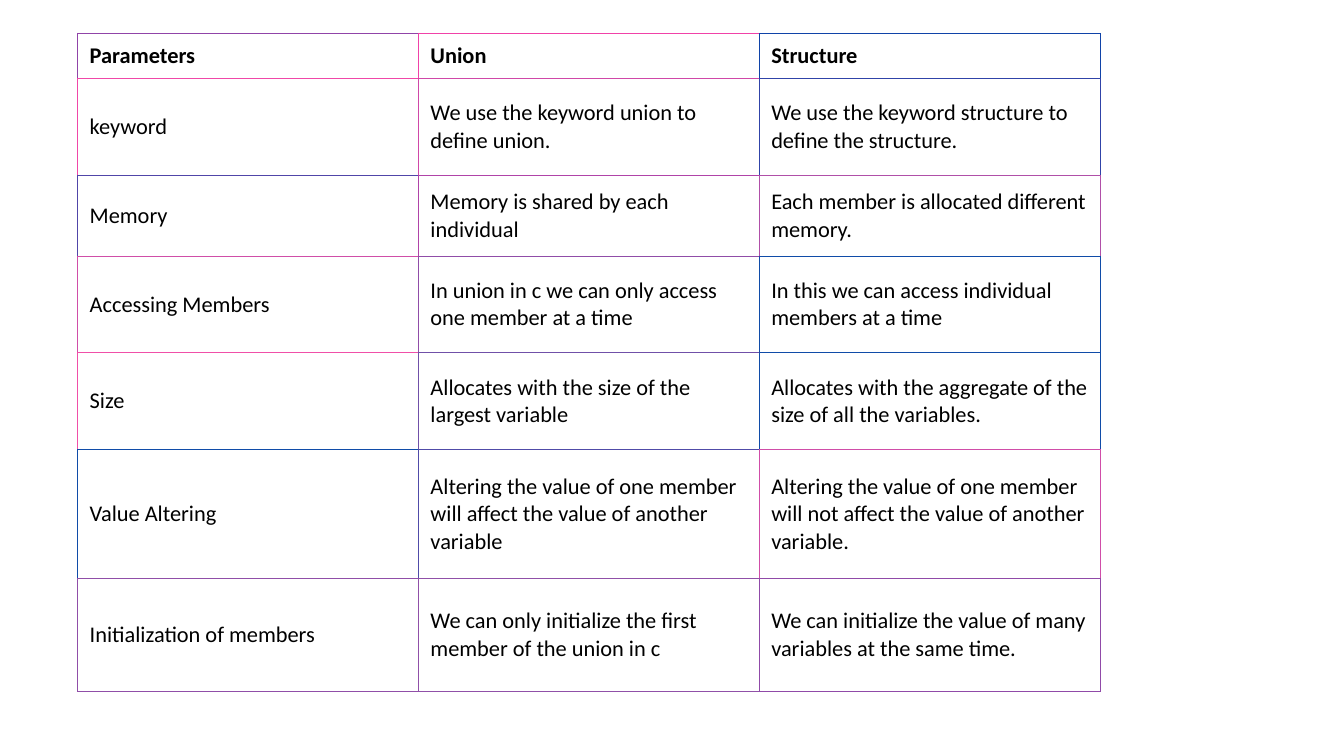
from dataclasses import dataclass

from lxml.etree import SubElement
from pptx import Presentation
from pptx.dml.color import RGBColor
from pptx.enum.text import MSO_ANCHOR
from pptx.oxml.ns import qn
from pptx.table import _Cell
from pptx.util import Inches, Pt

COLOURS = {"text": "000000", "cell": "FFFFFF"}
# Left and top edge colour of each cell, by row.
EDGE_COLOURS = {
    "Parameters": ("9044A8", "F042A8", "1043A8"),
    "keyword": ("F047A8", "D048A8", "3043A8"),
    "Memory": ("5045A8", "B043A8", "B04FA8"),
    "Accessing Members": ("D04EA8", "904DA8", "104CA8"),
    "Size": ("F04FA8", "7050A8", "104CA8"),
    "Value Altering": ("104CA8", "504BA8", "D04DA8"),
    "Initialization of members": ("904EA8", "9050A8", "904AA8"),
}
FONT = "Calibri"
COLUMN_WIDTH = 3.38


@dataclass(frozen=True)
class Comparison:
    parameter: str
    union: str
    structure: str
    height: float


COMPARISONS = [
    Comparison("Parameters", "Union", "Structure", 0.45),
    Comparison("keyword", "We use the keyword union to define union.",
               "We use the keyword structure to define the structure.", 0.96),
    Comparison("Memory", "Memory is shared by each individual",
               "Each member is allocated different memory.", 0.8),
    Comparison("Accessing Members",
               "In union in c we can only access one member at a time",
               "In this we can access individual members at a time", 0.96),
    Comparison("Size", "Allocates with the size of the largest variable",
               "Allocates with the aggregate of the size of all the variables.", 0.96),
    Comparison("Value Altering",
               "Altering the value of one member will affect the value of another variable",
               "Altering the value of one member will not affect the value of another variable.",
               1.28),
    Comparison("Initialization of members",
               "We can only initialize the first member of the union in c",
               "We can initialize the value of many variables at the same time.", 1.12),
]


def edge_colour(row: int, column: int) -> str:
    """Give a cell's own edge colour; past the last row or column, the last one's."""
    row = min(row, len(COMPARISONS) - 1)
    edges = EDGE_COLOURS[COMPARISONS[row].parameter]
    return edges[min(column, len(edges) - 1)]


def draw_borders(cell: _Cell, row: int, column: int) -> None:
    """Draw left and top in the cell's colour, right and bottom in its neighbours'."""
    own = edge_colour(row, column)
    sides = {
        "a:lnL": own,
        "a:lnR": edge_colour(row, column + 1),
        "a:lnT": own,
        "a:lnB": edge_colour(row + 1, column),
    }
    properties = cell._tc.get_or_add_tcPr()
    for side, colour in sides.items():
        line = SubElement(properties, qn(side), w=str(Pt(0.75)))
        fill = SubElement(line, qn("a:solidFill"))
        SubElement(fill, qn("a:srgbClr"), val=colour)


def fill_cell(cell: _Cell, text: str, bold: bool) -> None:
    cell.fill.solid()
    cell.fill.fore_color.rgb = RGBColor.from_string(COLOURS["cell"])
    cell.vertical_anchor = MSO_ANCHOR.MIDDLE
    cell.margin_left = cell.margin_right = Inches(0.12)
    cell.margin_top = cell.margin_bottom = Inches(0.06)
    cell.text_frame.text = text
    font = cell.text_frame.paragraphs[0].runs[0].font
    font.name = FONT
    font.size = Pt(16)
    font.bold = bold
    font.color.rgb = RGBColor.from_string(COLOURS["text"])


def main() -> None:
    presentation = Presentation()
    presentation.slide_width = Inches(13.33)
    presentation.slide_height = Inches(7.5)
    slide = presentation.slides.add_slide(presentation.slide_layouts[6])

    total_height = sum(comparison.height for comparison in COMPARISONS)
    table = slide.shapes.add_table(
        len(COMPARISONS), 3, Inches(0.77), Inches(0.33),
        Inches(3 * COLUMN_WIDTH), Inches(total_height)).table
    table.first_row = table.horz_banding = False
    for table_column in table.columns:
        table_column.width = Inches(COLUMN_WIDTH)

    for row, comparison in enumerate(COMPARISONS):
        table.rows[row].height = Inches(comparison.height)
        texts = (comparison.parameter, comparison.union, comparison.structure)
        for column, text in enumerate(texts):
            cell = table.cell(row, column)
            draw_borders(cell, row, column)
            fill_cell(cell, text, bold=row == 0)

    presentation.save("out.pptx")


if __name__ == "__main__":
    main()
